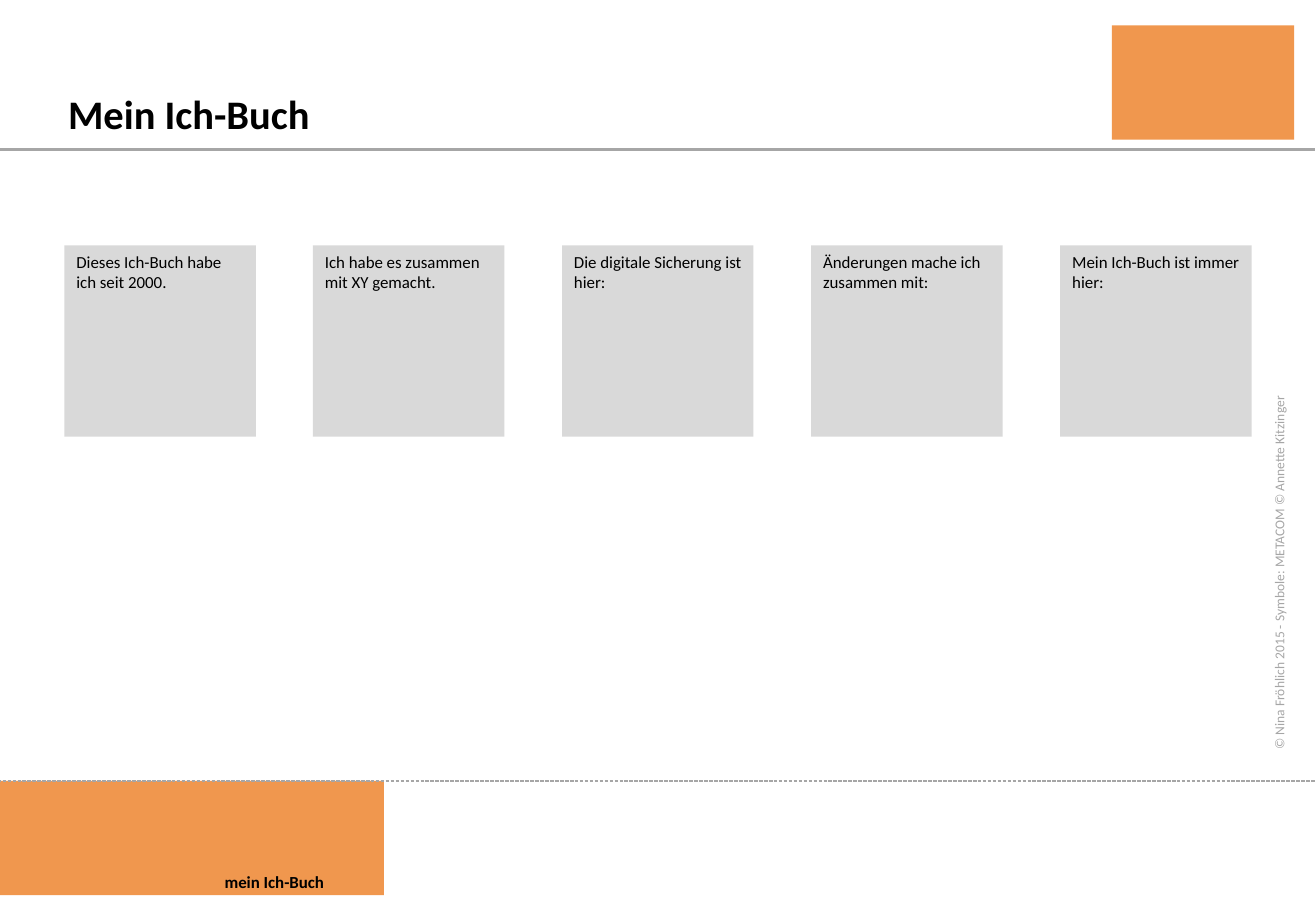
from pptx import Presentation
from pptx import util as u
from pptx.dml.color import RGBColor
from pptx.enum import dml, shapes, text
from pptx.oxml.ns import qn
from lxml import etree

PX = 914400 // 200
THEME = {
    "font": "Calibri",
    "accent": "F0974E", "line": "A6A6A6", "card": "D9D9D9", "ink": "000000",
    "title": 24, "body": 10, "credit": 8,
}


def px(*values):
    return [u.Emu(v * PX) for v in values]


def write(sp, words, size="body", color="ink", bold=False, anchor=text.MSO_ANCHOR.TOP):
    tf = sp.text_frame
    tf.word_wrap = True
    tf.auto_size = text.MSO_AUTO_SIZE.NONE
    tf.vertical_anchor = anchor
    tf.margin_left, tf.margin_top, tf.margin_right, tf.margin_bottom = px(20, 10, 20, 10)
    p = tf.paragraphs[0]
    p.alignment = text.PP_ALIGN.LEFT
    r = p.add_run()
    r.text = words
    r.font.name = THEME["font"]
    r.font.size = u.Pt(THEME[size])
    r.font.bold = bold
    r.font.color.rgb = RGBColor.from_string(THEME[color])


prs = Presentation()
prs.slide_width, prs.slide_height = px(2166, 1500)
s = prs.slides.add_slide(prs.slide_layouts[5])

labels = [
    "Dieses Ich-Buch habe ich seit 2000.",
    "Ich habe es zusammen mit XY gemacht.",
    "Die digitale Sicherung ist hier:",
    "Änderungen mache ich zusammen mit:",
    "Mein Ich-Buch ist immer hier:",
]
first, last, side = 106, 1745, 315
cards = [
    (first + (last - first) * i // (len(labels) - 1), 404, side, side, "card", label)
    for i, label in enumerate(labels)
]
tabs = [(0, 1286, 632, 188, "accent", ""), (1830, 42, 300, 188, "accent", "")]

for x, y, w, h, fill, label in tabs + cards:
    sp = s.shapes.add_shape(shapes.MSO_SHAPE.RECTANGLE, *px(x, y, w, h))
    sp.shadow.inherit = False
    sp.fill.solid()
    sp.fill.fore_color.rgb = RGBColor.from_string(THEME[fill])
    sp.line.fill.background()
    if label:
        write(sp, label)

for y, width, dash in [(246, 1.5, None), (1286, 0.75, dml.MSO_LINE.SQUARE_DOT)]:
    cn = s.shapes.add_connector(shapes.MSO_CONNECTOR.STRAIGHT, *px(-4, y, 2164, y))
    cn.line.color.rgb = RGBColor.from_string(THEME["line"])
    cn.line.width = u.Pt(width)
    cn.line.dash_style = dash
    etree.SubElement(cn._element.spPr, qn("a:effectLst"))

title = s.shapes.title
title.left, title.top, title.width, title.height = px(92, 136, 1694, 102)
write(title, "Mein Ich-Buch", size="title", bold=True, anchor=text.MSO_ANCHOR.MIDDLE)

tag = s.shapes.add_textbox(*px(350, 1428, 262, 48))
write(tag, "mein Ich-Buch", bold=True, anchor=text.MSO_ANCHOR.MIDDLE)

credit = s.shapes.add_textbox(*px(1752, 876, 708, 48))
credit.rotation = 270
write(credit, "© Nina Fröhlich 2015 - Symbole: METACOM © Annette Kitzinger", size="credit", color="line")

prs.save("out.pptx")
